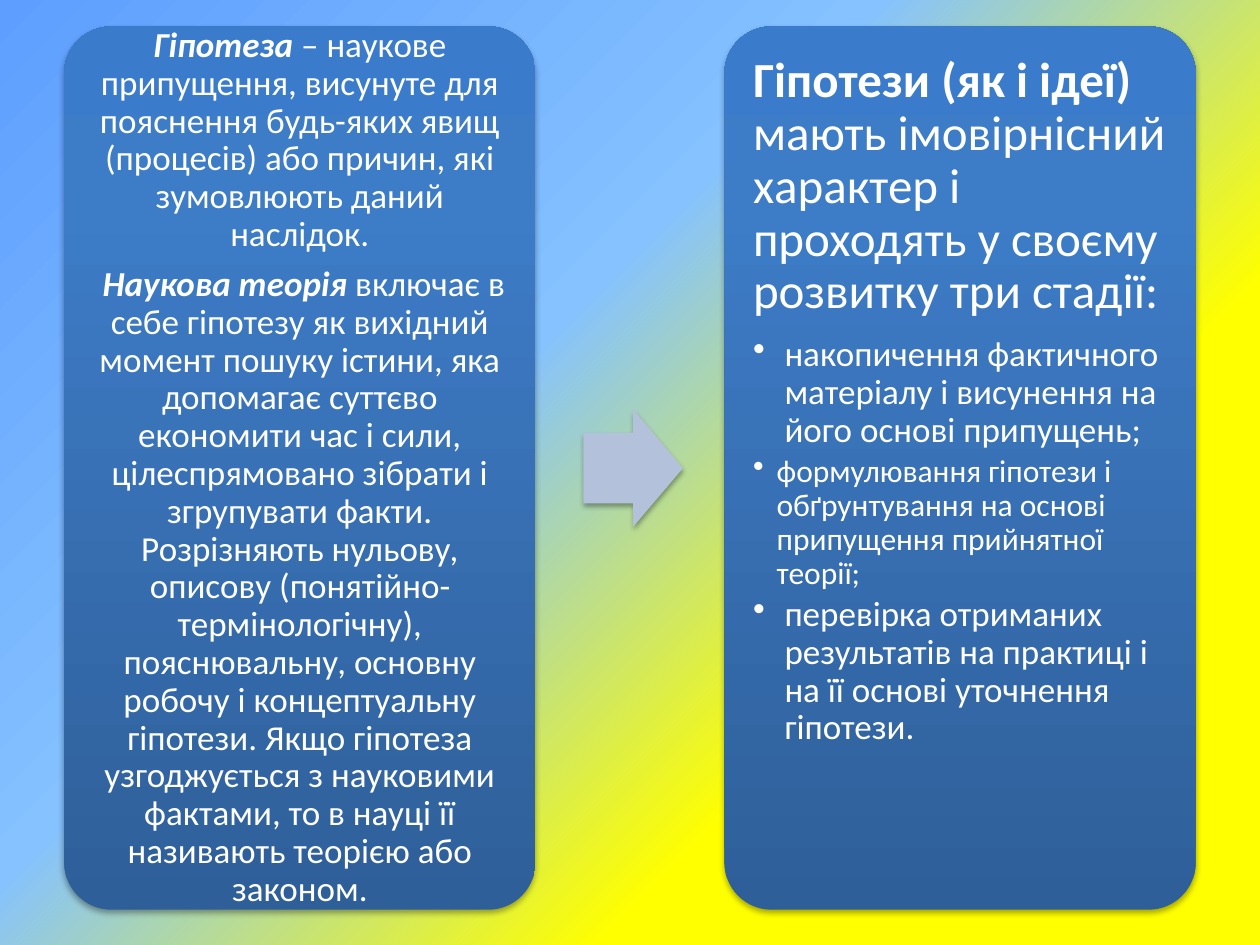
from dataclasses import dataclass

from lxml import etree
from pptx import Presentation
from pptx.dml.color import RGBColor
from pptx.dml.fill import FillFormat
from pptx.enum.shapes import MSO_SHAPE
from pptx.enum.text import MSO_ANCHOR, PP_ALIGN
from pptx.oxml.ns import qn
from pptx.shapes.autoshape import Shape
from pptx.slide import Slide
from pptx.text.text import TextFrame
from pptx.util import Pt

ROUNDED = MSO_SHAPE.ROUNDED_RECTANGLE
RIGHT_ARROW = MSO_SHAPE.RIGHT_ARROW
CENTER, LEFT = PP_ALIGN.CENTER, PP_ALIGN.LEFT
MIDDLE, TOP = MSO_ANCHOR.MIDDLE, MSO_ANCHOR.TOP


@dataclass(frozen=True)
class Theme:
    font: str = "Calibri"
    text: str = "FFFFFF"
    arrow: str = "B3C1DB"
    shadow: str = "000000"
    heading: float = 28
    body: float = 20
    small: float = 18
    background: tuple = ((0, "5E9EFF"), (40, "85C2FF"), (70, "FFFF00"), (100, "FFFF00"))
    panel: tuple = ((0, "2F5F99"), (80, "3D7CC7"), (100, "3A7CCB"))


@dataclass(frozen=True)
class Box:
    left: float
    top: float
    width: float
    height: float

    def lengths(self) -> tuple:
        return Pt(self.left), Pt(self.top), Pt(self.width), Pt(self.height)

    def inset(self, margin: float) -> "Box":
        return Box(self.left + margin, self.top + margin,
                   self.width - 2 * margin, self.height - 2 * margin)


@dataclass(frozen=True)
class Statement:
    lead: str
    text: str
    size: float
    space_after: float
    italic_lead: bool = False
    bullet_indent: float = 0


@dataclass(frozen=True)
class Panel:
    left: float
    anchor: MSO_ANCHOR
    alignment: PP_ALIGN
    margin: float
    statements: tuple


THEME = Theme()
PANEL_TOP, PANEL_WIDTH, PANEL_HEIGHT, PANEL_INSET = 15.1, 269.3, 504.7, 7.9
ARROW = Box(333.4, 234, 56.9, 67)

PANELS = (
    Panel(36.7, MIDDLE, CENTER, 6, (
        Statement("Гіпотеза",
                  " – наукове припущення, висунуте для пояснення будь-яких явищ (процесів) "
                  "або причин, які зумовлюють даний наслідок.", THEME.body, 7, True),
        Statement(" Наукова теорія ",
                  "включає в себе гіпотезу як вихідний момент пошуку істини, яка допомагає "
                  "суттєво економити час і сили, цілеспрямовано зібрати і згрупувати факти. "
                  "Розрізняють нульову, описову (понятійно-термінологічну), пояснювальну, "
                  "основну робочу і концептуальну гіпотези. Якщо гіпотеза узгоджується з "
                  "науковими фактами, то в науці її називають теорією або законом.",
                  THEME.body, 7, True),
    )),
    Panel(414, TOP, LEFT, 8.4, (
        Statement("Гіпотези (як і ідеї) ",
                  "мають імовірнісний характер і проходять у своєму розвитку три стадії:",
                  THEME.heading, 9.8),
        Statement("", "накопичення фактичного матеріалу і висунення на його основі припущень;",
                  THEME.body, 3, bullet_indent=18),
        Statement("", "формулювання гіпотези і обґрунтування на основі припущення прийнятної "
                  "теорії;", THEME.small, 2.7, bullet_indent=13.5),
        Statement("", "перевірка отриманих результатів на практиці і на її основі уточнення "
                  "гіпотези.", THEME.body, 3, bullet_indent=18),
    )),
)


def set_gradient(fill: FillFormat, owner: etree._Element, stops: tuple, angle: float) -> None:
    """Give the fill its stops; the angle runs counter-clockwise."""
    fill.gradient()
    fill.gradient_angle = angle
    stop_list = next(owner.iter(qn("a:gsLst")))
    for stop in list(stop_list):
        stop_list.remove(stop)
    for position, color in stops:
        stop = etree.SubElement(stop_list, qn("a:gs"), pos=str(position * 1000))
        etree.SubElement(stop, qn("a:srgbClr"), val=color)


def add_shadow(shape: Shape) -> None:
    shape.shadow.inherit = False
    effects = next(shape.element.iter(qn("a:effectLst")))
    shadow = etree.SubElement(effects, qn("a:outerShdw"), blurRad=str(Pt(3.1)),
                              dist=str(Pt(1.8)), dir="5400000", rotWithShape="0")
    color = etree.SubElement(shadow, qn("a:srgbClr"), val=THEME.shadow)
    etree.SubElement(color, qn("a:alpha"), val="35000")


def add_shape(slide: Slide, kind: MSO_SHAPE, box: Box, adjustments: tuple) -> Shape:
    shape = slide.shapes.add_shape(kind, *box.lengths())
    for index, value in enumerate(adjustments):
        shape.adjustments[index] = value
    shape.line.fill.background()
    add_shadow(shape)
    return shape


def add_statement(frame: TextFrame, statement: Statement, alignment: PP_ALIGN, first: bool) -> None:
    paragraph = frame.paragraphs[0] if first else frame.add_paragraph()
    paragraph_format = {"alignment": alignment, "line_spacing": 0.9,
                        "space_before": Pt(0), "space_after": Pt(statement.space_after)}
    for name, value in paragraph_format.items():
        setattr(paragraph, name, value)
    if statement.bullet_indent:
        paragraph.level = 1
        properties = paragraph._p.get_or_add_pPr()
        properties.set("marL", str(Pt(statement.bullet_indent)))
        properties.set("indent", str(-Pt(statement.bullet_indent)))
        etree.SubElement(properties, qn("a:buChar"), char="•")
    for text, is_lead in ((statement.lead, True), (statement.text, False)):
        if not text:
            continue
        run = paragraph.add_run()
        run.text = text
        font_format = {"name": THEME.font, "size": Pt(statement.size), "bold": is_lead,
                       "italic": is_lead and statement.italic_lead}
        for name, value in font_format.items():
            setattr(run.font, name, value)
        run.font.color.rgb = RGBColor.from_string(THEME.text)


def add_panel(slide: Slide, panel: Panel) -> None:
    box = Box(panel.left, PANEL_TOP, PANEL_WIDTH, PANEL_HEIGHT)
    card = add_shape(slide, ROUNDED, box, (0.1,))
    set_gradient(card.fill, card.element, THEME.panel, 90)
    frame = slide.shapes.add_textbox(*box.inset(PANEL_INSET).lengths()).text_frame
    frame_format = {"word_wrap": True, "vertical_anchor": panel.anchor}
    for side in ("left", "top", "right", "bottom"):
        frame_format[f"margin_{side}"] = Pt(panel.margin)
    for name, value in frame_format.items():
        setattr(frame, name, value)
    for index, statement in enumerate(panel.statements):
        add_statement(frame, statement, panel.alignment, index == 0)


def add_arrow(slide: Slide) -> None:
    arrow = add_shape(slide, RIGHT_ARROW, ARROW, (0.6, 0.5))
    arrow.fill.solid()
    arrow.fill.fore_color.rgb = RGBColor.from_string(THEME.arrow)


def main() -> None:
    presentation = Presentation()
    presentation.slide_width, presentation.slide_height = Pt(720), Pt(540)
    slide = presentation.slides.add_slide(presentation.slide_layouts[6])
    set_gradient(slide.background.fill, slide.element, THEME.background, 315)
    definitions, stages = PANELS
    add_panel(slide, definitions)
    add_arrow(slide)
    add_panel(slide, stages)
    presentation.save("out.pptx")


if __name__ == "__main__":
    main()
